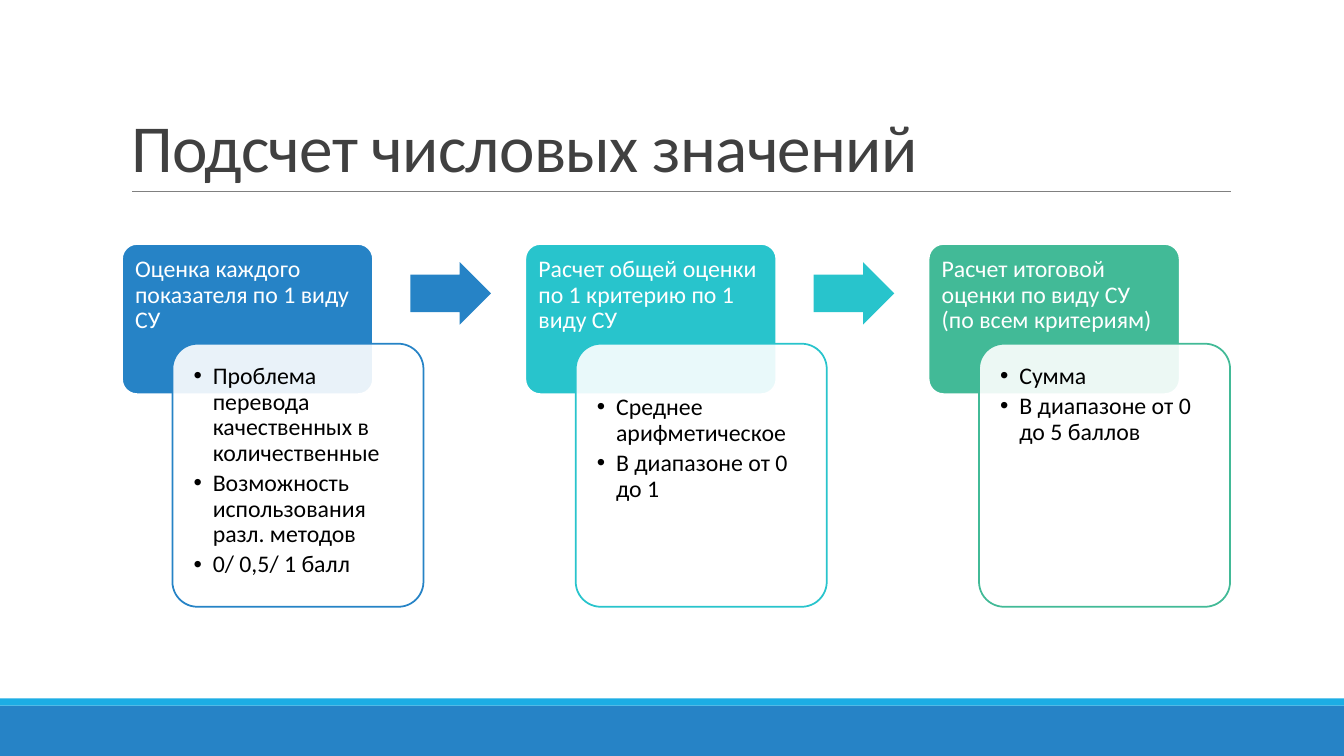
from dataclasses import dataclass
from typing import Any

from lxml import etree
from pptx import Presentation
from pptx import util as u
from pptx.dml.color import RGBColor
from pptx.enum import shapes, text
from pptx.oxml import ns

WHITE = RGBColor(0xFF, 0xFF, 0xFF)
BLACK = RGBColor(0x00, 0x00, 0x00)
TITLE_GRAY = RGBColor(0x40, 0x40, 0x40)
RULE_GRAY = RGBColor(0x80, 0x80, 0x80)
BLUE = RGBColor(0x26, 0x83, 0xC6)
SKY = RGBColor(0x1C, 0xAD, 0xE4)
TEAL = RGBColor(0x28, 0xC4, 0xCC)
GREEN = RGBColor(0x42, 0xBA, 0x97)

FIRST_LEFT = 1.21
STEP_PITCH = 4.0
CARD_WIDTH = 2.49
INSET = 0.13
Box = tuple[float, float, float, float]


@dataclass(frozen=True)
class Step:
    heading: str
    points: tuple[str, ...]
    color: RGBColor
    list_drop: float = 0.0


STEPS = (
    Step("Оценка каждого показателя по 1 виду СУ",
         ("Проблема перевода качественных в количественные",
          "Возможность использования разл. методов",
          "0/ 0,5/ 1 балл"), BLUE),
    Step("Расчет общей оценки по 1 критерию по 1 виду СУ",
         ("Среднее арифметическое", "В диапазоне от 0 до 1"), TEAL, 0.31),
    Step("Расчет итоговой оценки по виду СУ (по всем критериям)",
         ("Сумма", "В диапазоне от 0 до 5 баллов"), GREEN),
)


def set_all(target: Any, values: dict[str, Any]) -> None:
    """Set every named attribute of the target."""
    for name, value in values.items():
        setattr(target, name, value)


def place(shape: Any, box: Box) -> None:
    names = ("left", "top", "width", "height")
    set_all(shape, dict(zip(names, map(u.Inches, box))))


def add_filled(slide: Any, kind: Any, box: Box, fill: RGBColor,
               line: RGBColor | None = None, adjustments: tuple[float, ...] = ()) -> Any:
    shape = slide.shapes.add_shape(kind, *map(u.Inches, box))
    shape.shadow.inherit = False
    shape.fill.solid()
    shape.fill.fore_color.rgb = fill
    if line is None:
        shape.line.fill.background()
    else:
        shape.line.color.rgb = line
        shape.line.width = u.Pt(1.25)
    for index, value in enumerate(adjustments):
        shape.adjustments[index] = value
    return shape


def write(shape: Any, lines: tuple[str, ...], color: RGBColor, size: float = 17,
          spacing: float = 0.9, after: float = 0,
          anchor: Any = text.MSO_ANCHOR.TOP, **margins: float) -> None:
    """Fill the shape with one formatted paragraph per line."""
    frame = shape.text_frame
    frame.text = "\n".join(lines)
    set_all(frame, {"word_wrap": True, "auto_size": text.MSO_AUTO_SIZE.NONE,
                    "vertical_anchor": anchor})
    set_all(frame, {f"margin_{side}": u.Inches(value) for side, value in margins.items()})
    for paragraph in frame.paragraphs:
        set_all(paragraph, {"alignment": text.PP_ALIGN.LEFT, "line_spacing": spacing,
                            "space_before": u.Pt(0), "space_after": u.Pt(after)})
        for run in paragraph.runs:
            set_all(run.font, {"name": "Calibri", "size": u.Pt(size), "bold": False})
            run.font.color.rgb = color


def add_bullets(shape: Any) -> None:
    for paragraph in shape.text_frame.paragraphs:
        properties = paragraph._p.get_or_add_pPr()
        properties.set("marL", str(u.Inches(0.19)))
        properties.set("indent", str(u.Inches(-0.19)))
        etree.SubElement(properties, ns.qn("a:buFont")).set("typeface", "Arial")
        etree.SubElement(properties, ns.qn("a:buChar")).set("char", "•")


def add_background(slide: Any) -> None:
    rectangle = shapes.MSO_SHAPE.RECTANGLE
    add_filled(slide, rectangle, (0, 7, 13.33, 0.5), BLUE)
    add_filled(slide, rectangle, (0, 6.93, 13.33, 0.07), SKY)
    rule = slide.shapes.add_connector(
        shapes.MSO_CONNECTOR.STRAIGHT, *map(u.Inches, (1.31, 1.9, 12.21, 1.9)))
    rule.line.color.rgb = RULE_GRAY
    rule.line.width = u.Pt(0.5)
    etree.SubElement(rule._element.spPr, ns.qn("a:effectLst"))


def add_title(slide: Any) -> None:
    title = slide.shapes.title
    place(title, (1.2, 0.31, 11, 1.59))
    write(title, ("Подсчет числовых значений",), TITLE_GRAY, size=48, spacing=0.85,
          anchor=text.MSO_ANCHOR.BOTTOM)
    title.text_frame.paragraphs[0].runs[0].font._element.set("spc", "-50")


def add_step(slide: Any, step: Step, left: float, body: Any) -> None:
    rounded = shapes.MSO_SHAPE.ROUNDED_RECTANGLE
    add_filled(slide, rounded, (left, 2.42, CARD_WIDTH, 1.49), step.color, WHITE, (0.1,))
    heading = slide.shapes.add_textbox(*map(u.Inches, (left, 2.42, CARD_WIDTH, 1)))
    write(heading, (step.heading,), WHITE,
          left=INSET, top=INSET, right=INSET, bottom=0.07)

    panel = add_filled(slide, rounded, (left + 0.5, 3.41, CARD_WIDTH, 2.61),
                       WHITE, step.color, (0.1,))
    panel_color = panel._element.spPr.find(f"{ns.qn('a:solidFill')}/{ns.qn('a:srgbClr')}")
    etree.SubElement(panel_color, ns.qn("a:alpha")).set("val", "90000")

    place(body, (left + 0.58, 3.48, 2.34, 2.46))
    write(body, step.points, BLACK, after=3,
          left=INSET, top=INSET + step.list_drop, right=INSET, bottom=INSET)
    add_bullets(body)
    slide.shapes._spTree.append(body._element)  # bring the list above its panel


def main() -> None:
    presentation = Presentation()
    set_all(presentation, {"slide_width": u.Inches(13.33), "slide_height": u.Inches(7.5)})
    comparison_layout = presentation.slide_layouts[4]
    slide = presentation.slides.add_slide(comparison_layout)
    bodies = [item for item in slide.placeholders if item.placeholder_format.idx > 0]

    add_background(slide)
    add_title(slide)
    for index, (step, body) in enumerate(zip(STEPS, bodies)):
        left = FIRST_LEFT + index * STEP_PITCH
        add_step(slide, step, left, body)
        if index < len(STEPS) - 1:
            add_filled(slide, shapes.MSO_SHAPE.RIGHT_ARROW, (left + 2.86, 2.6, 0.8, 0.62),
                       step.color, adjustments=(0.6, 0.5))
    for spare in bodies[len(STEPS):]:
        slide.shapes._spTree.remove(spare._element)
    presentation.save("out.pptx")


if __name__ == "__main__":
    main()
